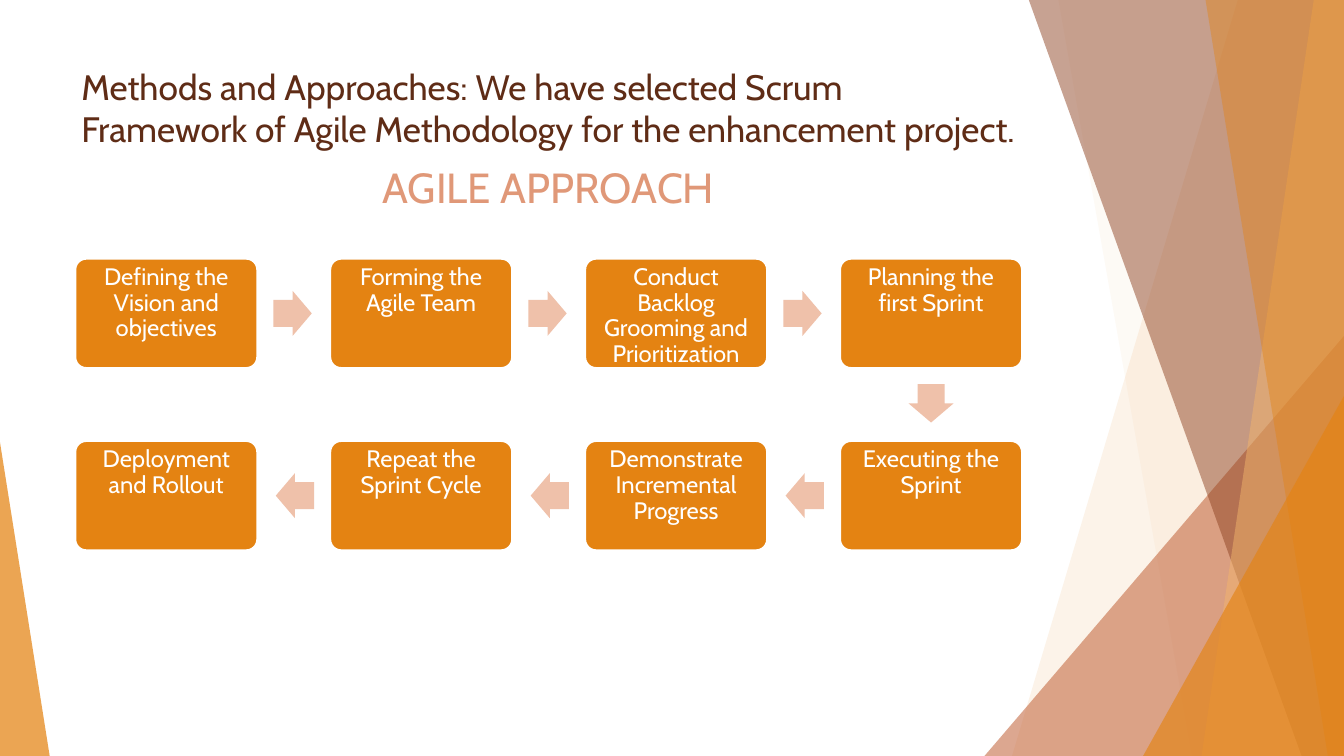
from collections import namedtuple
from dataclasses import dataclass

from pptx import Presentation
from pptx import util as u
from pptx.dml.color import RGBColor
from pptx.enum import shapes, text
from pptx.oxml.ns import qn
from lxml import etree

Box = namedtuple("Box", "x y w h")


@dataclass(frozen=True)
class Theme:
    font: str = "Cabin"
    white: str = "FFFFFF"
    dark: str = "5F2C16"
    rose: str = "E09878"
    pale: str = "EFC1AA"
    main: str = "E48312"
    rust: str = "BD582C"
    brown: str = "8E4221"
    sand: str = "F3B56C"
    title: float = 37.8
    head: float = 45
    step: float = 25.5


T = Theme()
WIDE, HIGH = u.Inches(20), u.Inches(11.25)

FACETS = [
    (T.main, 9, [(92.1, 0), (100, 0), (100, 100), (75.3, 100)]),
    (T.main, 4, [(78.75, 0), (100, 0), (100, 100), (88.7, 100)]),
    (T.rust, 52, [(73.25, 100), (100, 44.44), (100, 100)]),
    (T.brown, 49, [(76.55, 0), (100, 0), (100, 100), (96.85, 100)]),
    (T.sand, 49, [(97.75, 0), (100, 0), (100, 100), (89.4, 100)]),
    (T.main, 42, [(89.7, 0), (100, 0), (100, 100), (98.8, 100)]),
    (T.main, 64, [(85.05, 100), (100, 52.36), (100, 100)]),
    (T.main, 72, [(0, 100), (0, 58.5), (3.7, 100)]),
]
LINES = [((76.8, 0), (86.9, 100)), ((100, 53.6), (60.85, 100))]

STEPS = [
    "Defining the Vision and objectives",
    "Forming the Agile Team",
    "Conduct Backlog Grooming and Prioritization",
    "Planning the first Sprint",
    "Executing the Sprint",
    "Demonstrate Incremental Progress",
    "Repeat the Sprint Cycle",
    "Deployment and Rollout",
]


def share(x, y, w, h):
    return Box(*(round(part * side / 100)
                 for part, side in zip((x, y, w, h), (WIDE, HIGH) * 2)))


def color(code):
    return RGBColor.from_string(code)


def write(shape, words, size, tint, lead, align=text.PP_ALIGN.CENTER, pad=(0, 0)):
    frame = shape.text_frame
    frame.word_wrap = True
    frame.auto_size = text.MSO_AUTO_SIZE.NONE
    frame.vertical_anchor = text.MSO_ANCHOR.TOP
    frame.margin_left = frame.margin_right = u.Inches(pad[0])
    frame.margin_top, frame.margin_bottom = u.Inches(pad[1]), 0
    para = frame.paragraphs[0]
    para.alignment = align
    para.line_spacing = u.Pt(lead)
    run = para.add_run()
    run.text = words
    run.font.name = T.font
    run.font.size = u.Pt(size)
    run.font.color.rgb = color(tint)


def paint(shape, tint, alpha=100):
    shape.shadow.inherit = False
    shape.fill.solid()
    shape.fill.fore_color.rgb = color(tint)
    shape.line.fill.background()
    if alpha < 100:
        tone = next(shape.element.spPr.iter(qn("a:srgbClr")))
        etree.SubElement(tone, qn("a:alpha"), val=str(alpha * 1000))


def decor(slide, box):
    def spot(point):
        return (round(box.x + box.w * point[0] / 100),
                round(box.y + box.h * point[1] / 100))

    for start, end in LINES:
        line = slide.shapes.add_connector(
            shapes.MSO_CONNECTOR.STRAIGHT, *spot(start), *spot(end))
        line.line.color.rgb = color(T.white)
        line.line.width = u.Pt(0.75)
        etree.SubElement(line.element.spPr, qn("a:effectLst"))
    for tint, alpha, points in FACETS:
        first, *rest = map(spot, points)
        pen = slide.shapes.build_freeform(*first)
        pen.add_line_segments(rest, close=True)
        paint(pen.convert_to_shape(), tint, alpha)


def header(slide, box):
    title = slide.shapes.title
    title.left, title.top, title.width = box.x, box.y, box.w
    title.height = round(box.h * 0.6)
    write(title, "Methods and Approaches: We have selected Scrum Framework of "
          "Agile Methodology for the enhancement project.",
          T.title, T.dark, 45.4, text.PP_ALIGN.LEFT)
    label = slide.shapes.add_textbox(
        round(box.x + box.w * 0.107), round(box.y + box.h * 0.61),
        round(box.w * 0.786), round(box.h * 0.39))
    write(label, "AGILE APPROACH", T.head, T.rose, 54)


def card(slide, box, words):
    shape = slide.shapes.add_shape(shapes.MSO_SHAPE.ROUNDED_RECTANGLE, *box)
    shape.adjustments[0] = 0.1
    paint(shape, T.main)
    shape.line.color.rgb = color(T.white)
    shape.line.width = u.Pt(2.25)
    write(shape, words, T.step, T.white, 27.5, pad=(0.06, 0.04))


def arrow(slide, box, across, down):
    wide, high, gap = u.Inches(0.57), u.Inches(0.67), u.Inches(0.24)
    reach = gap + wide / 2
    mid = box.x + box.w / 2 + across * (box.w / 2 + reach)
    level = box.y + box.h / 2 + down * (box.h / 2 + reach)
    shape = slide.shapes.add_shape(
        shapes.MSO_SHAPE.RIGHT_ARROW,
        round(mid - wide / 2), round(level - high / 2), wide, high)
    shape.adjustments[0], shape.adjustments[1] = 0.6, 0.5
    shape.rotation = 90 if down else 180 if across < 0 else 0
    paint(shape, T.pale)


def flow(slide, box, cols=4):
    wide = box.w / (cols + 0.4 * (cols - 1))
    gap = 0.4 * wide
    rows = -(-len(STEPS) // cols)
    high = (box.h - gap * (rows - 1)) / rows
    for i, words in enumerate(STEPS):
        row, col = divmod(i, cols)
        turn = col == cols - 1
        way = -1 if row % 2 else 1
        if way < 0:
            col = cols - 1 - col
        cell = Box(round(box.x + col * (wide + gap)),
                   round(box.y + row * (high + gap)), round(wide), round(high))
        card(slide, cell, words)
        if i < len(STEPS) - 1:
            arrow(slide, cell, 0 if turn else way, 1 if turn else 0)


def main():
    deck = Presentation()
    deck.slide_width, deck.slide_height = WIDE, HIGH
    slide = deck.slides.add_slide(deck.slide_layouts[5])
    decor(slide, share(0, 0, 100, 100))
    header(slide, share(6.05, 8.62, 69.5, 20.89))
    flow(slide, share(5.6, 34.22, 70.45, 38.58))
    deck.save("out.pptx")


if __name__ == "__main__":
    main()
